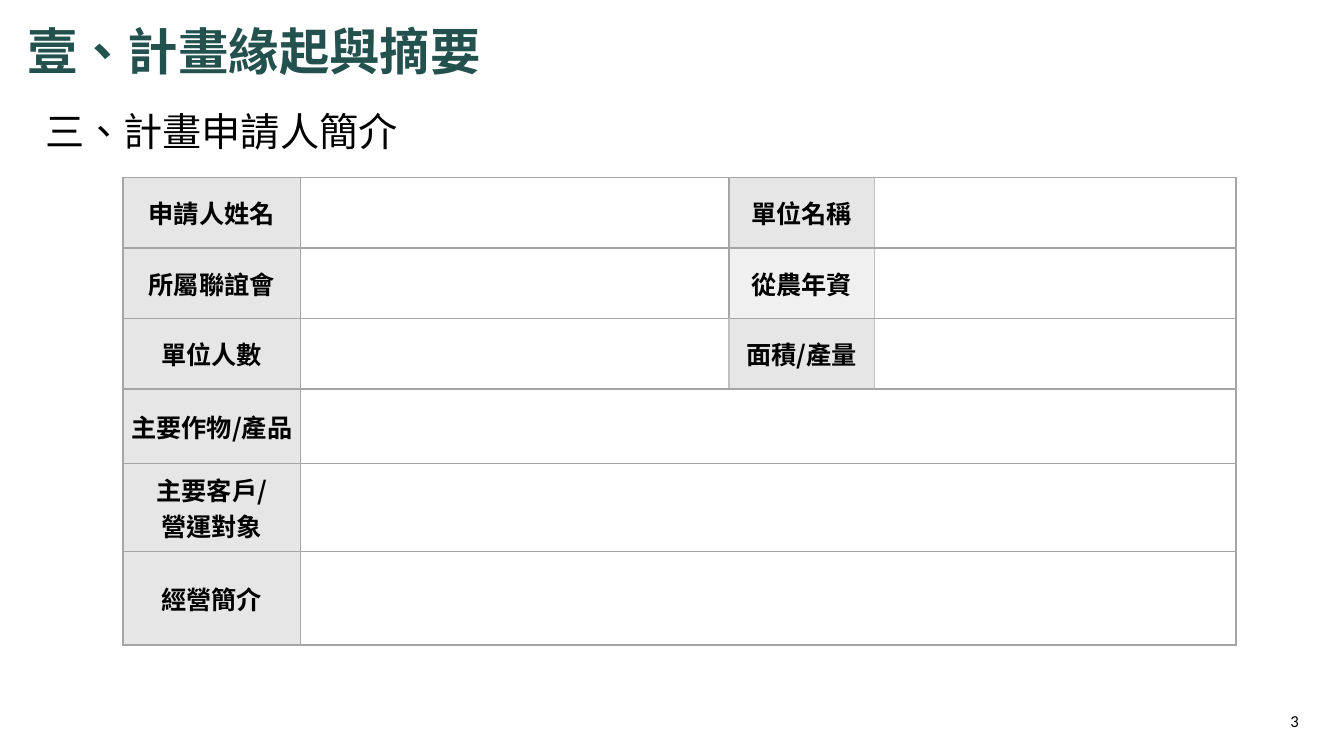
from lxml.etree import SubElement
from pptx import Presentation
from pptx.dml.color import RGBColor
from pptx.enum.text import MSO_ANCHOR as Anchor, MSO_AUTO_SIZE as AutoSize, PP_ALIGN as Align
from pptx.oxml import parse_xml
from pptx.oxml.ns import nsdecls, qn
from pptx.util import Inches, Pt

COLORS = {
    "title": "23514D", "text": "000000", "label": "E7E6E6",
    "light label": "F0F0F0", "blank": "FFFFFF", "grid": "A5A5A5", "soft grid": "BFBFBF",
}
CJK = "Noto Sans CJK SC"
COLUMN_WIDTHS = [1.76, 4.25, 1.44, 3.59]
ROW_HEIGHTS = [0.7, 0.7, 0.7, 0.74, 0.87, 0.93]
LEFT_LABELS = ["申請人姓名", "所屬聯誼會", "單位人數", "主要作物/產品", "主要客戶/\n營運對象", "經營簡介"]
RIGHT_LABELS = ["單位名稱", "從農年資", "面積/產量"]


def write(frame, text, size=18, font=CJK, color="text", bold=False, align=Align.LEFT):
    """Fill a text frame, one paragraph for each line of text."""
    for index, line in enumerate(text.split("\n")):
        para = frame.add_paragraph() if index else frame.paragraphs[0]
        para.alignment = align
        span = para.add_run()
        span.text = line
        span.font.name = font
        span.font.size = Pt(size)
        span.font.bold = bold
        span.font.color.rgb = RGBColor.from_string(COLORS[color])
        properties = span._r.get_or_add_rPr()
        properties.set("lang", "zh-TW")
        SubElement(properties, qn("a:ea")).set("typeface", font)


class FormSlide:
    def __init__(self, deck):
        self.page = deck.slides.add_slide(deck.slide_layouts[6])

    def text(self, text, left, top, width, height, wrap=True,
             grow=True, anchor=Anchor.TOP, **style):
        box = self.page.shapes.add_textbox(
            Inches(left), Inches(top), Inches(width), Inches(height))
        frame = box.text_frame
        frame.word_wrap = wrap
        frame.auto_size = AutoSize.SHAPE_TO_FIT_TEXT if grow else AutoSize.NONE
        frame.vertical_anchor = anchor
        write(frame, text, **style)

    def table(self, left, top, widths, heights):
        table = self.page.shapes.add_table(
            len(heights), len(widths), Inches(left), Inches(top),
            Inches(sum(widths)), Inches(sum(heights))).table
        table.first_row = table.horz_banding = False
        for column, width in zip(table.columns, widths):
            column.width = Inches(width)
        for row, height in zip(table.rows, heights):
            row.height = Inches(height)
        return table

    def cell(self, cell, fill="blank", text="", soft_sides=""):
        """Style a cell; soft_sides names the sides (L, R) with a paler border."""
        properties = cell._tc.get_or_add_tcPr()
        for index, side in enumerate("LRTB"):
            color = COLORS["soft grid" if side in soft_sides else "grid"]
            properties.insert(index, parse_xml(
                f'<a:ln{side} {nsdecls("a")} w="{Pt(1)}"><a:solidFill>'
                f'<a:srgbClr val="{color}"/></a:solidFill></a:ln{side}>'))
        cell.fill.solid()
        cell.fill.fore_color.rgb = RGBColor.from_string(COLORS[fill])
        if text:
            cell.vertical_anchor = Anchor.MIDDLE
            cell.margin_left = cell.margin_right = Inches(0.02)
            cell.margin_top = cell.margin_bottom = 0
            write(cell.text_frame, text, bold=True, align=Align.CENTER)


def main():
    deck = Presentation()
    deck.slide_width, deck.slide_height = Inches(13.33), Inches(7.5)
    slide = FormSlide(deck)

    slide.text("三、計畫申請人簡介", 0.35, 1.02, 3.74, 0.57, wrap=False, size=28)
    slide.text("壹、計畫緣起與摘要", 0.17, 0.15, 5.63, 0.71, size=36, color="title", bold=True)
    slide.text("3", 12.54, 6.95, 0.6, 0.4, grow=False, anchor=Anchor.MIDDLE,
               size=12, font="Calibri", align=Align.CENTER)

    table = slide.table(1.22, 1.76, COLUMN_WIDTHS, ROW_HEIGHTS)
    for row, label in enumerate(LEFT_LABELS):
        slide.cell(table.cell(row, 0), "label", label)
        last_pair = row == len(RIGHT_LABELS) - 1
        slide.cell(table.cell(row, 1), soft_sides="R" if last_pair else "")
        if row < len(RIGHT_LABELS):
            slide.cell(table.cell(row, 2), "light label" if row == 1 else "label",
                       RIGHT_LABELS[row], soft_sides="LR" if last_pair else "R")
            slide.cell(table.cell(row, 3), soft_sides="L")
        else:
            for column in (2, 3):
                slide.cell(table.cell(row, column))
            table.cell(row, 1).merge(table.cell(row, 3))

    deck.save("out.pptx")


if __name__ == "__main__":
    main()
